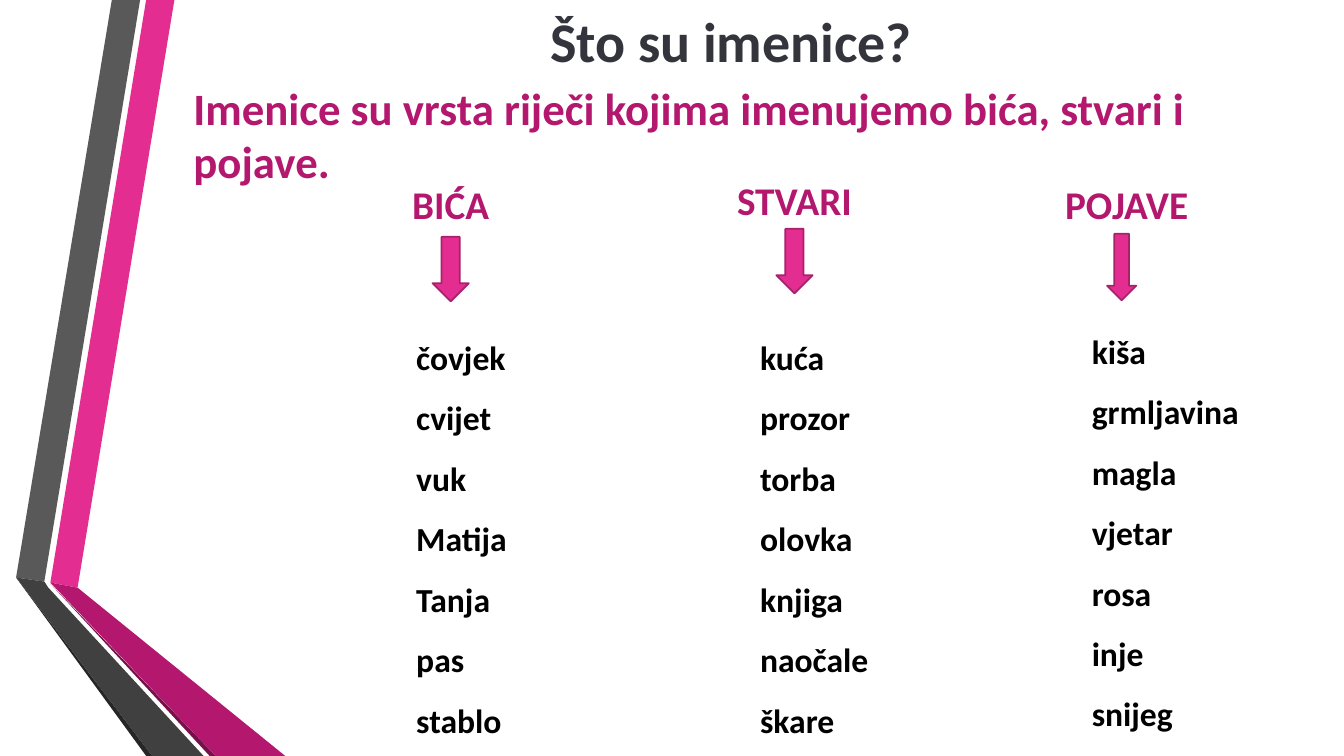
from pptx import Presentation
from pptx.dml.color import RGBColor
from pptx.enum import shapes, text
from pptx.util import Inches, Pt

PINK, MAGENTA, BLACK = "E32D91", "B4186E", "000000"


def paint(colour_format, colour):
    colour_format.rgb = RGBColor.from_string(colour)


def write(box, lines, size, colour, align, anchor=text.MSO_ANCHOR.TOP):
    frame = box.text_frame
    frame.word_wrap = True
    frame.vertical_anchor = anchor
    frame.text = "\n".join(lines)
    for paragraph in frame.paragraphs:
        paragraph.alignment = align
        font = paragraph.runs[0].font
        font.name, font.size, font.bold = "Calibri", Pt(size), True
        paint(font.color, colour)
    return frame


deck = Presentation()
deck.slide_width, deck.slide_height = Inches(13.33), Inches(7.5)
slide = deck.slides.add_slide(deck.slide_layouts[5])
LEFT, CENTER = text.PP_ALIGN.LEFT, text.PP_ALIGN.CENTER

ribbons = [
    (PINK, [(0.5, 5.78), (0.77, 5.83), (1.73, 0), (1.45, 0)]),
    ("595959", [(1.39, 0), (1.11, 0), (0.16, 5.73), (0.44, 5.77)]),
    ("262626", [(0.16, 5.73), (1.45, 7.5), (1.51, 7.5)]),
    ("781049", [(0.5, 5.79), (2.08, 7.5), (2.14, 7.5)]),
    (MAGENTA, [(0.5, 5.78), (2.14, 7.5), (2.83, 7.5), (0.77, 5.83)]),
    ("404040", [(2.02, 7.5), (0.48, 5.83), (0.44, 5.77), (0.16, 5.73), (1.51, 7.5)]),
]
for colour, corners in ribbons:
    points = [(Inches(x), Inches(y)) for x, y in corners]
    outline = slide.shapes.build_freeform(*points[0])
    outline.add_line_segments(points[1:], close=True)
    ribbon = outline.convert_to_shape()
    ribbon.shadow.inherit = False
    ribbon.fill.solid()
    paint(ribbon.fill.fore_color, colour)
    ribbon.line.fill.background()

title = slide.shapes.title
title.left, title.top = Inches(1.77), Inches(-0.18)
title.width, title.height = Inches(10.96), Inches(1.16)
write(title, ["Što su imenice?"], 40, "34343D", CENTER, text.MSO_ANCHOR.MIDDLE)

definition = slide.shapes.add_textbox(Inches(1.82), Inches(0.41), Inches(10.96), Inches(1.84))
sentence = write(
    definition,
    ["Imenice su vrsta riječi kojima imenujemo bića, stvari i pojave."],
    32, MAGENTA, LEFT, text.MSO_ANCHOR.MIDDLE,
).paragraphs[0]
sentence.space_before, sentence.space_after = Pt(6.4), Pt(6)

groups = [
    ("BIĆA", (3.69, 1.74, 1.56, 0.57), (4.29, 2.35, 0.36, 0.64), (4.03, 3.09, 1.71, 4.28),
     ["čovjek", "cvijet", "vuk", "Matija", "Tanja", "pas", "stablo"]),
    ("STVARI", (7.1, 1.7, 1.56, 0.57), (7.7, 2.27, 0.36, 0.64), (7.44, 3.09, 1.71, 4.28),
     ["kuća", "prozor", "torba", "olovka", "knjiga", "naočale", "škare"]),
    ("POJAVE", (10.26, 1.74, 1.83, 0.57), (10.98, 2.32, 0.29, 0.66), (10.73, 3.03, 2.19, 4.34),
     ["kiša", "grmljavina", "magla", "vjetar", "rosa", "inje", "snijeg"]),
]
for heading, heading_area, arrow_area, words_area, words in groups:
    heading_box = slide.shapes.add_textbox(*map(Inches, heading_area))
    write(heading_box, [heading], 28, MAGENTA, CENTER)

    arrow = slide.shapes.add_shape(shapes.MSO_SHAPE.DOWN_ARROW, *map(Inches, arrow_area))
    arrow.shadow.inherit = False
    arrow.fill.solid()
    paint(arrow.fill.fore_color, PINK)
    paint(arrow.line.color, "A8216B")
    arrow.line.width = Pt(1.25)

    words_box = slide.shapes.add_textbox(*map(Inches, words_area))
    for word in write(words_box, words, 24, BLACK, LEFT).paragraphs:
        word.line_spacing = 1.5

deck.save("out.pptx")
